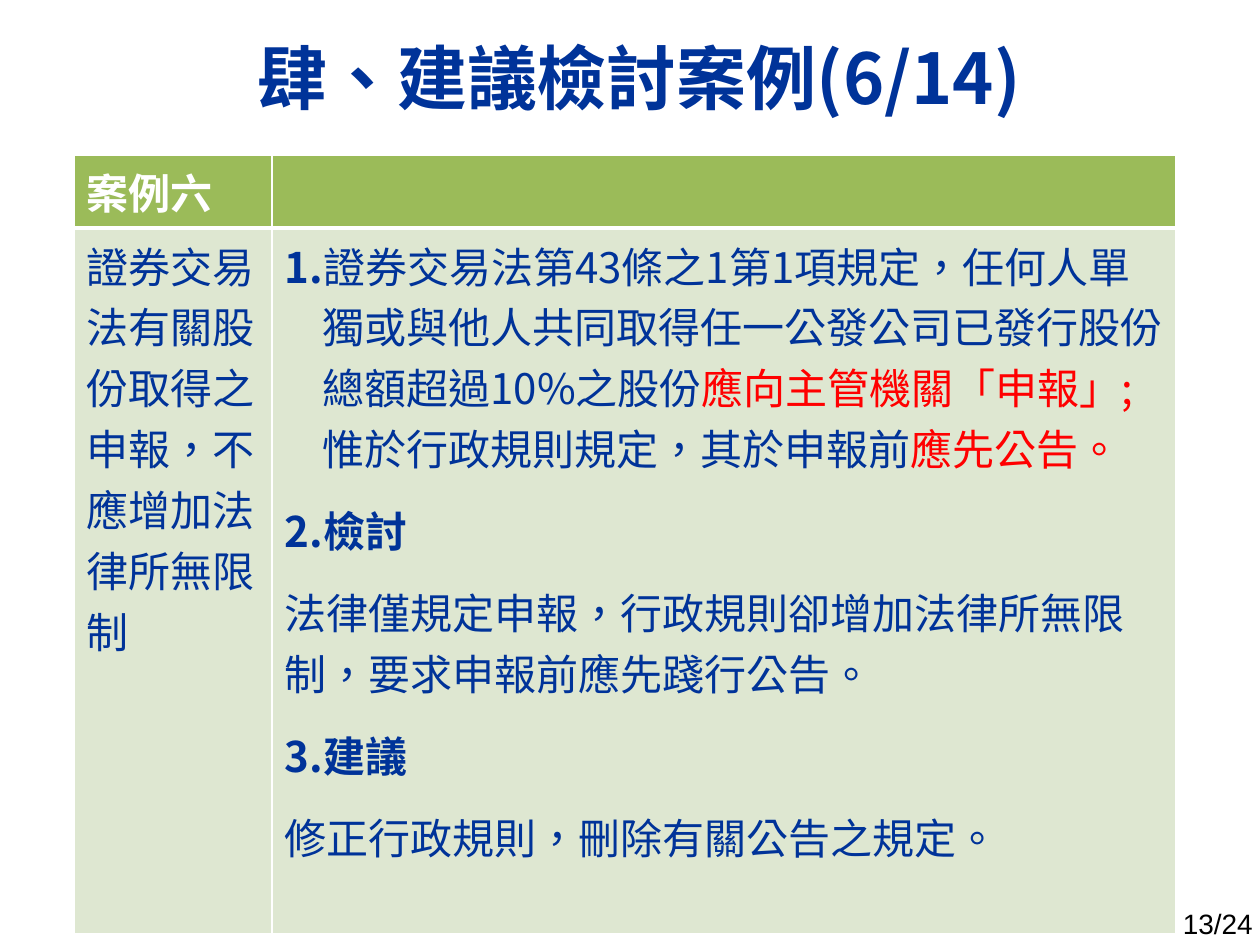
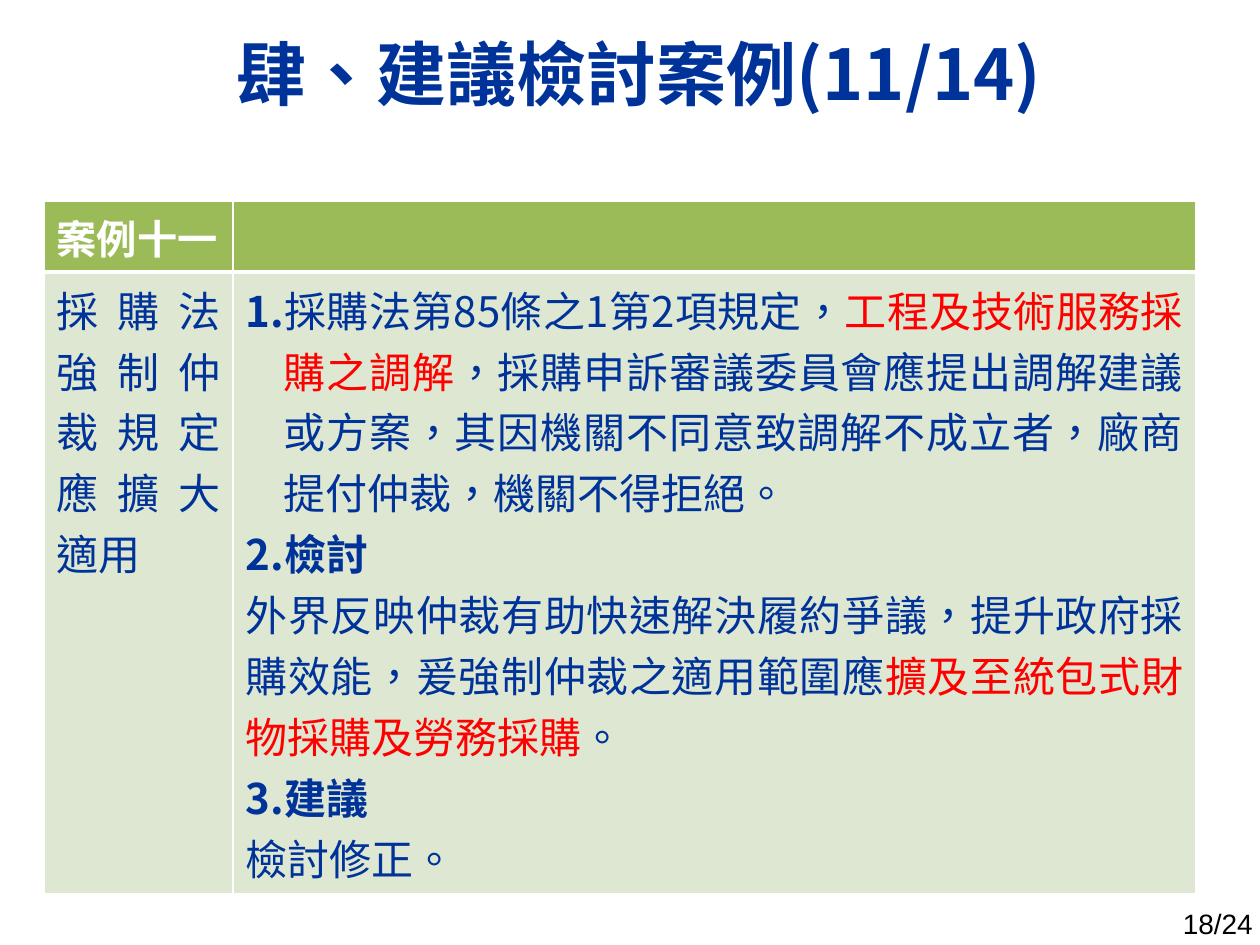
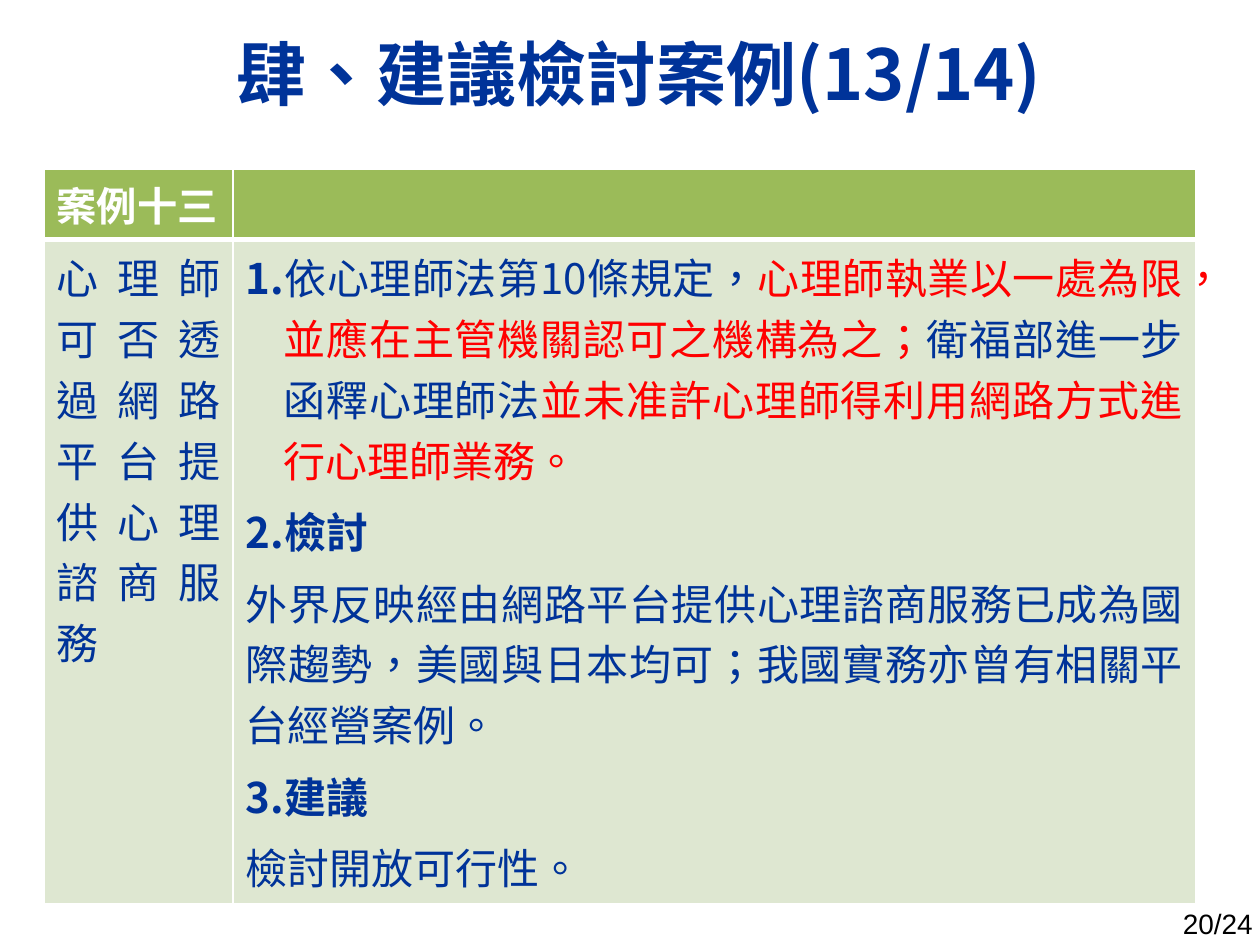
"""Build three case-review slides, each with a title, a case table and a page number."""
from dataclasses import dataclass
from typing import NamedTuple

import lxml.etree
import pptx
import pptx.dml.color
import pptx.enum.text
import pptx.oxml.ns
import pptx.util

Inches = pptx.util.Inches
Pt = pptx.util.Pt
ALIGN = pptx.enum.text.PP_ALIGN
ANCHOR = pptx.enum.text.MSO_ANCHOR
qn = pptx.oxml.ns.qn

COLORS = {
    "navy": "003399",
    "red": "FF0000",
    "white": "FFFFFF",
    "black": "000000",
    "header": "9BBB59",
    "body": "DEE7D1",
}
CJK_FONT = "Noto Sans CJK SC"
PAGE_TOTAL = 24
CASE_TOTAL = 14


class Span(NamedTuple):
    text: str
    color: str = "navy"
    bold: bool = False


class Para(NamedTuple):
    spans: list[Span]
    hanging: float = 0


@dataclass
class Grid:
    left: float
    top: float
    cols: tuple[float, float]
    rows: tuple[float, float]


@dataclass
class Case:
    number: int
    page: int
    label: str
    topic: str
    grid: Grid
    review: list[Para]
    label_size: int = 23
    label_space: int = 3
    review_space: int = 3
    align: ALIGN = ALIGN.JUSTIFY
    title_line: float = 1
    title_space: int = 0


def heading(text: str, hanging: float = 0) -> Para:
    return Para([Span(text, bold=True)], hanging)


def plain(text: str) -> Para:
    return Para([Span(text)])


def clause(*spans: Span) -> Para:
    return Para([Span("1.", bold=True), *spans], 0.3)


CASES = [
    Case(
        6, 13, "案例六", "證券交易法有關股份取得之申報，不應增加法律所無限制",
        Grid(0.59, 1.23, (1.57, 7.17), (0.58, 5.6)),
        [
            clause(
                Span("證券交易法第43條之1第1項規定，任何人單獨或與他人共同取得任一公發公司已發行股份總額超過10%之股份"),
                Span("應向主管機關「申報」;", "red"),
                Span("惟於行政規則規定，其於申報前"),
                Span("應先公告。", "red"),
            ),
            heading("2.檢討"),
            plain("法律僅規定申報，行政規則卻增加法律所無限制，要求申報前應先踐行公告。"),
            heading("3.建議"),
            plain("修正行政規則，刪除有關公告之規定。"),
        ],
        label_size=24, label_space=0, review_space=6, align=ALIGN.LEFT,
        title_line=1.1, title_space=6,
    ),
    Case(
        11, 18, "案例十一", "採購法強制仲裁規定應擴大適用",
        Grid(0.35, 1.6, (1.5, 7.64), (0.56, 4.93)),
        [
            clause(
                Span("採購法第85條之1第2項規定，"),
                Span("工程及技術服務採購之調解", "red"),
                Span("，採購申訴審議委員會應提出調解建議或方案，其因機關不同意致調解不成立者，廠商提付仲裁，機關不得拒絕。"),
            ),
            heading("2.檢討", 0.4),
            Para([
                Span("外界反映仲裁有助快速解決履約爭議，提升政府採購效能，爰強制仲裁之適用範圍應"),
                Span("擴及至統包式財物採購及勞務採購", "red"),
                Span("。"),
            ]),
            heading("3.建議"),
            plain("檢討修正。"),
        ],
        review_space=0,
    ),
    Case(
        13, 20, "案例十三", "心理師可否透過網路平台提供心理諮商服務",
        Grid(0.35, 1.34, (1.5, 7.64), (0.56, 5.27)),
        [
            clause(
                Span("依心理師法第10條規定，"),
                Span("心理師執業以一處為限，並應在主管機關認可之機構為之；", "red"),
                Span("衛福部進一步函釋心理師法"),
                Span("並未准許心理師得利用網路方式進行心理師業務。", "red"),
            ),
            heading("2.檢討"),
            plain("外界反映經由網路平台提供心理諮商服務已成為國際趨勢，美國與日本均可；我國實務亦曾有相關平台經營案例。"),
            heading("3.建議"),
            plain("檢討開放可行性。"),
        ],
    ),
]


def rgb(name: str) -> pptx.dml.color.RGBColor:
    return pptx.dml.color.RGBColor.from_string(COLORS[name])


def write(tf, paras: list[Para], *, size: float = 24, font: str = CJK_FONT,
          align: ALIGN = ALIGN.LEFT, space: float = 0, after: float | None = None,
          line: float = 1) -> None:
    for i, para in enumerate(paras):
        p = tf.paragraphs[0] if i == 0 else tf.add_paragraph()
        p.alignment = align
        p.line_spacing = line
        p.space_before = Pt(space)
        p.space_after = Pt(space if after is None else after)
        if para.hanging:
            pPr = p._p.get_or_add_pPr()
            pPr.set("marL", str(Inches(para.hanging)))
            pPr.set("indent", str(-Inches(para.hanging)))
        for span in para.spans:
            r = p.add_run()
            r.text = span.text
            r.font.size = Pt(size)
            r.font.name = font
            r.font.bold = span.bold
            r.font.color.rgb = rgb(span.color)
            rPr = r._r.get_or_add_rPr()
            rPr.set("lang", "zh-TW")
            ea = lxml.etree.Element(qn("a:ea"), typeface=CJK_FONT)
            rPr.find(qn("a:latin")).addnext(ea)


def style_cell(cell, fill: str, borders: dict[str, float]) -> None:
    tcPr = cell._tc.get_or_add_tcPr()
    for side, width in borders.items():
        ln = lxml.etree.SubElement(tcPr, qn(f"a:ln{side}"), w=str(Pt(width)))
        solid = lxml.etree.SubElement(ln, qn("a:solidFill"))
        lxml.etree.SubElement(solid, qn("a:srgbClr"), val=COLORS["white"])
    cell.fill.solid()
    cell.fill.fore_color.rgb = rgb(fill)


def add_title(slide, case: Case) -> None:
    sp = slide.shapes.title
    sp.left, sp.top, sp.width, sp.height = map(Inches, (0.07, 0.13, 10, 0.89))
    tf = sp.text_frame
    tf.auto_size = pptx.enum.text.MSO_AUTO_SIZE.NONE
    tf.vertical_anchor = ANCHOR.MIDDLE
    title = Span(f"肆、建議檢討案例({case.number}/{CASE_TOTAL})", bold=True)
    write(tf, [Para([title])], size=40, align=ALIGN.CENTER,
          space=case.title_space, after=0, line=case.title_line)


def add_case_table(slide, case: Case) -> None:
    grid = case.grid
    table = slide.shapes.add_table(
        2, 2, Inches(grid.left), Inches(grid.top),
        Inches(sum(grid.cols)), Inches(sum(grid.rows))).table
    for column, width in zip(table.columns, grid.cols):
        column.width = Inches(width)
    for row, height in zip(table.rows, grid.rows):
        row.height = Inches(height)
    for i in range(2):
        style_cell(table.cell(0, i), "header", {"L": 1, "R": 1, "T": 1, "B": 3})
        style_cell(table.cell(1, i), "body", {"L": 1, "R": 1, "B": 1})
    write(table.cell(0, 0).text_frame, [Para([Span(case.label, "white", True)])],
          size=case.label_size, font="Calibri", space=case.label_space)
    write(table.cell(1, 0).text_frame, [plain(case.topic)],
          align=case.align, space=case.label_space)
    write(table.cell(1, 1).text_frame, case.review,
          align=case.align, space=case.review_space)


def add_page_number(slide, page: int) -> None:
    sp = slide.shapes.add_textbox(*map(Inches, (7.79, 7.13, 2.25, 0.4)))
    tf = sp.text_frame
    tf.word_wrap = True
    tf.vertical_anchor = ANCHOR.MIDDLE
    write(tf, [Para([Span(f"{page}/{PAGE_TOTAL}", "black")])],
          size=16, font="Arial", align=ALIGN.RIGHT)


def main() -> None:
    prs = pptx.Presentation()
    prs.slide_width, prs.slide_height = Inches(10), Inches(7.5)
    for case in CASES:
        slide = prs.slides.add_slide(prs.slide_layouts[5])
        add_page_number(slide, case.page)
        add_title(slide, case)
        add_case_table(slide, case)
    prs.save("out.pptx")


if __name__ == "__main__":
    main()
